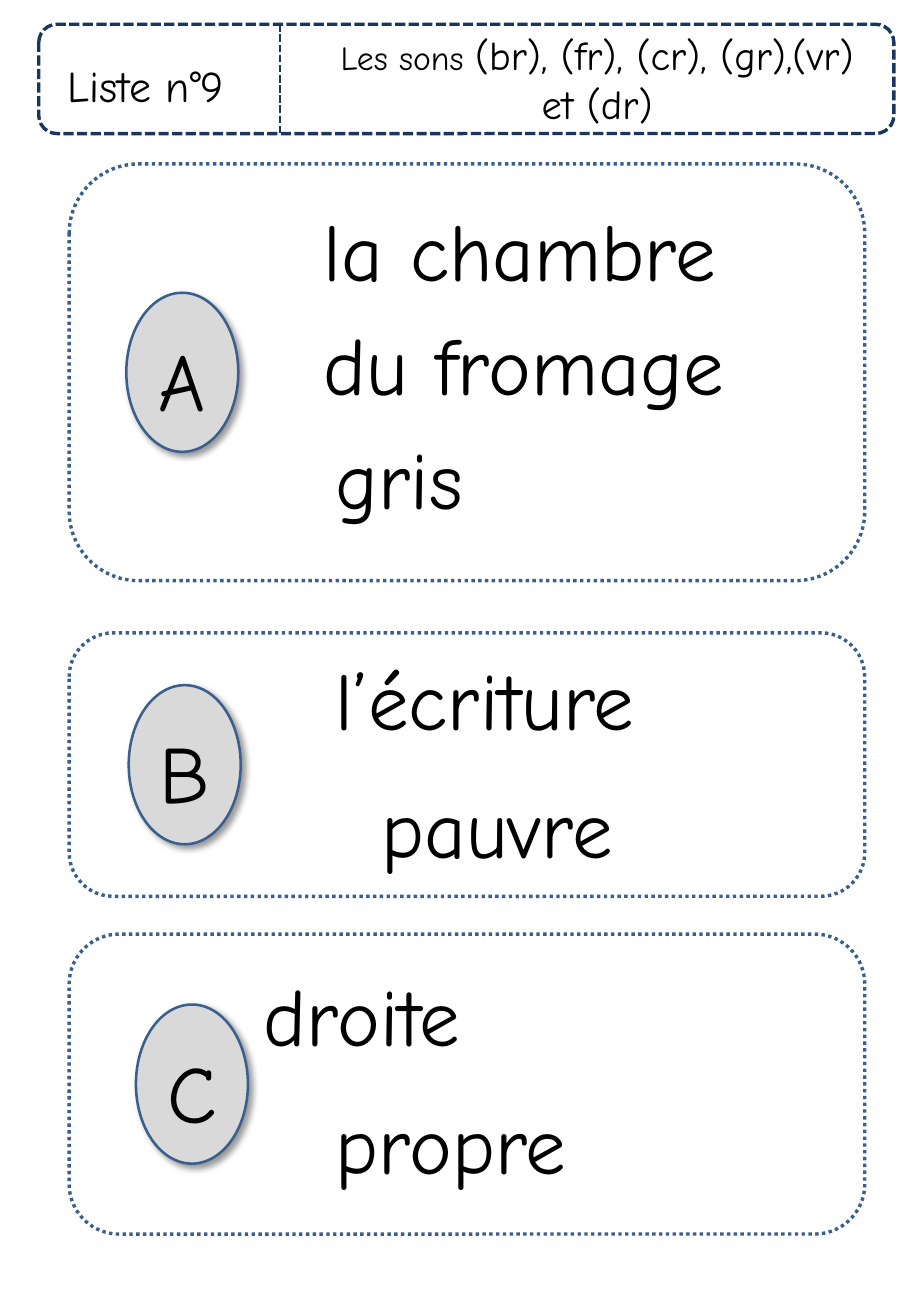
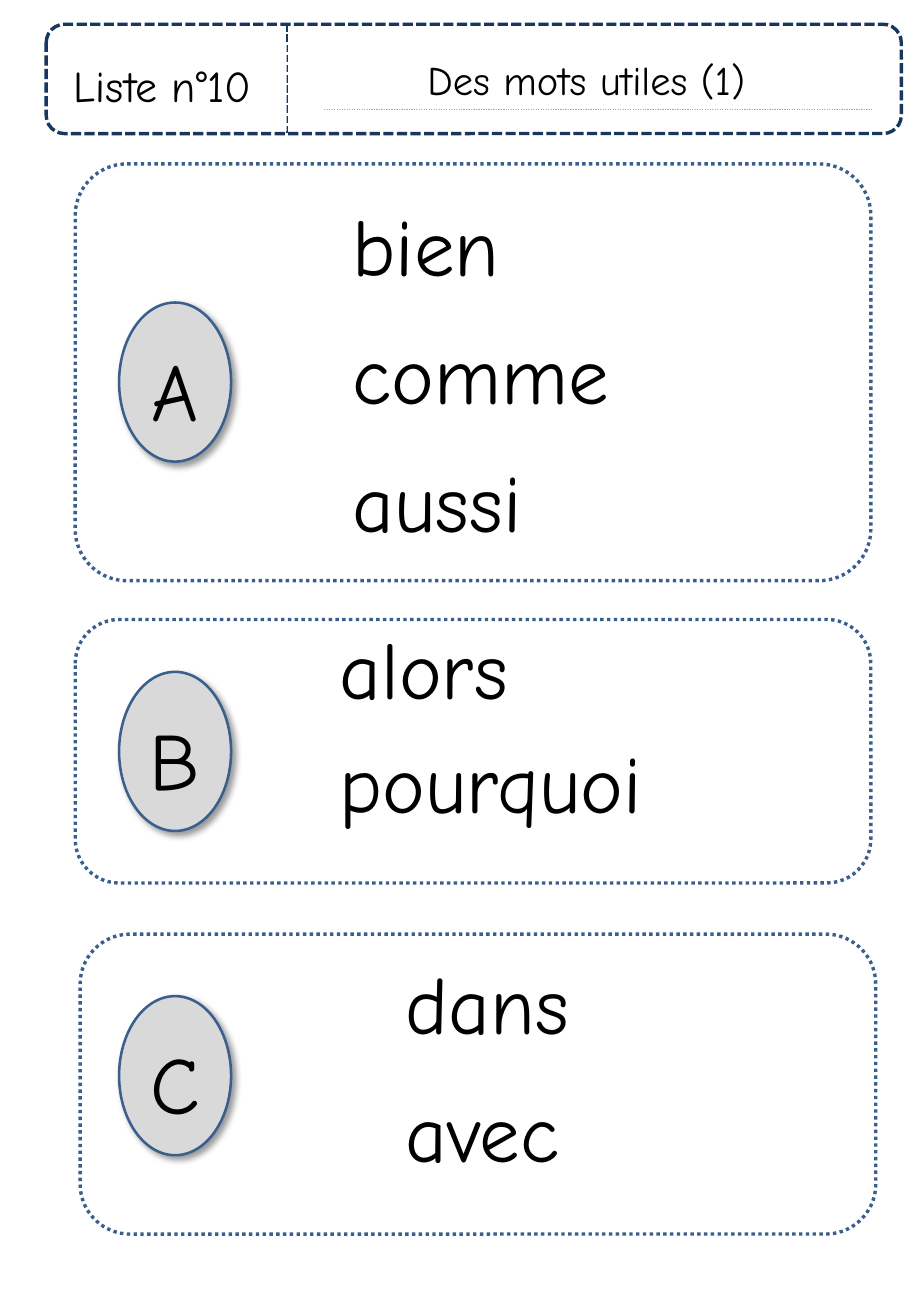
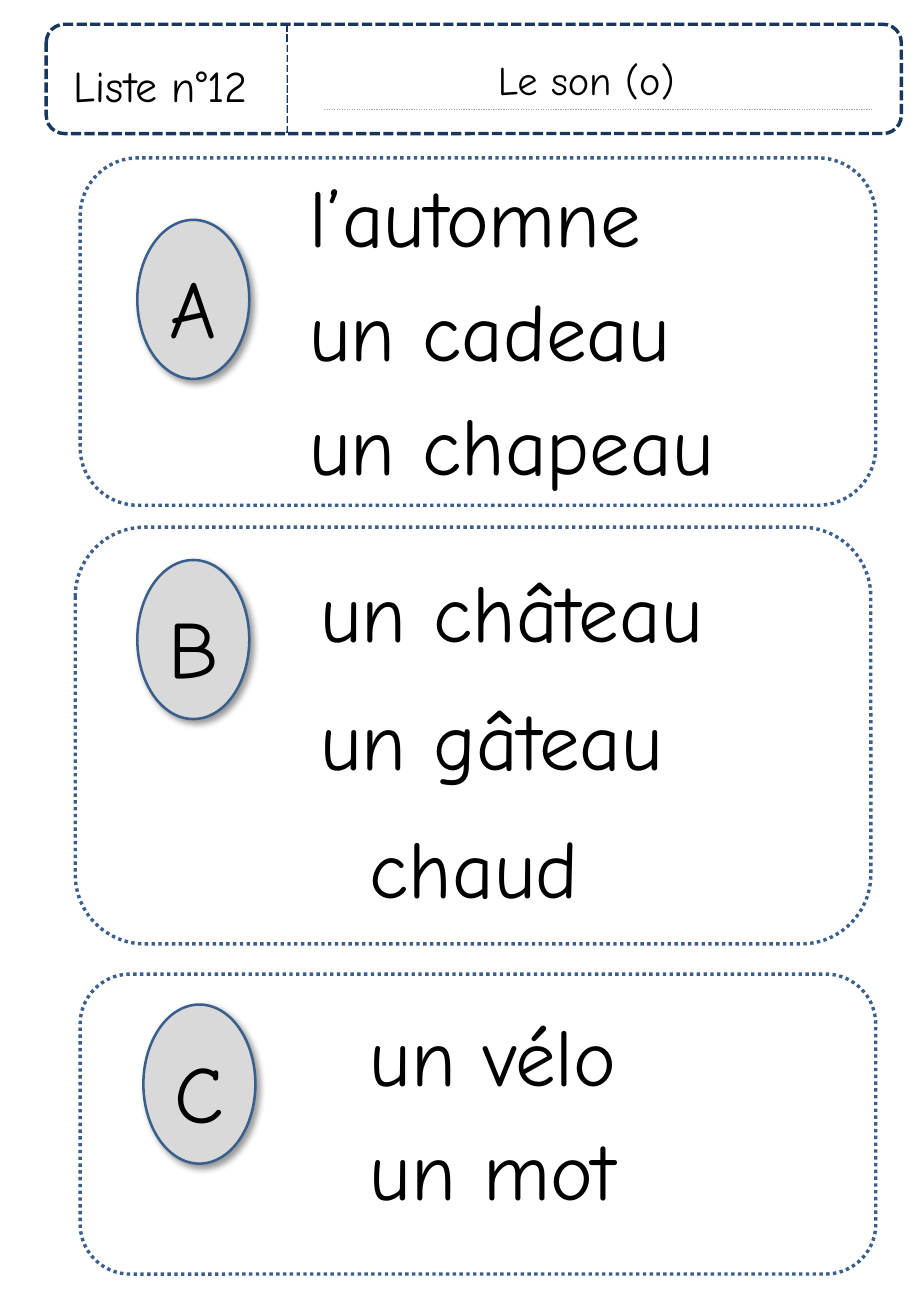
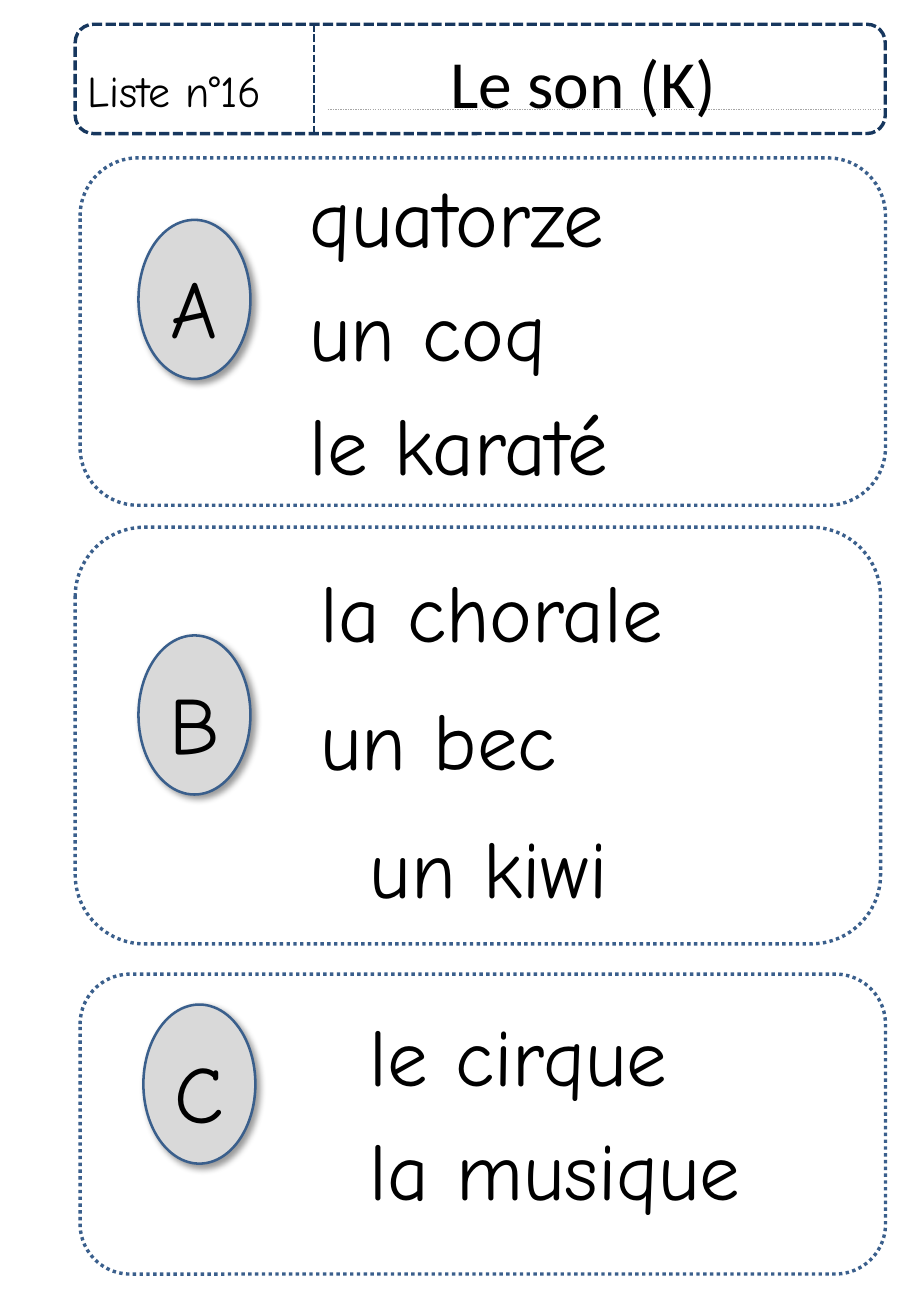
from lxml import etree
from pptx import Presentation
from pptx.dml.color import RGBColor as RGB
from pptx.enum.dml import MSO_LINE as DASH
from pptx.enum.shapes import MSO_CONNECTOR as LINK, MSO_SHAPE as SHAPE
from pptx.enum.text import PP_ALIGN as ALIGN
from pptx.oxml import parse_xml
from pptx.oxml.ns import nsdecls, qn
from pptx.util import Pt

HUES = {"navy": "17375E", "blue": "3A5F8C", "rule": "A6A6A6",
        "grey": "D9D9D9", "white": "FFFFFF", "ink": "000000"}
FONT = "Comic Neue"
TIGHT, LOOSE = 10, 18.4          # space between words of a panel
TOP, TALL = 14.4, 64.8           # header band
LOW, MID, HIGH, BIG = 156.2, 177.8, 205.9, 247   # panel heights


def hue(name):
    return RGB.from_string(HUES[name])


class Sheet:
    """Holds the style and the current slide."""

    def __init__(self):
        self.deck = Presentation()
        self.deck.slide_width, self.deck.slide_height = Pt(540), Pt(780)
        self.slide = None

    def page(self):
        self.slide = self.deck.slides.add_slide(self.deck.slide_layouts[6])

    def pen(self, line, color, width, dash=None):
        line.color.rgb = hue(color)
        line.width = Pt(width)
        if dash:
            line.dash_style = dash

    def run(self, para, text, size, font=FONT):
        run = para.add_run()
        run.text = text
        run.font.size, run.font.name = Pt(size), font
        run.font.color.rgb = hue("ink")

    def shape(self, kind, box, fill=None):
        item = self.slide.shapes.add_shape(kind, *map(Pt, box))
        item.shadow.inherit = False
        if fill:
            item.fill.solid()
            item.fill.fore_color.rgb = hue(fill)
        else:
            item.fill.background()
        return item

    def text(self, box):
        frame = self.slide.shapes.add_textbox(*map(Pt, box)).text_frame
        frame.word_wrap = True
        return frame

    def frame(self, box, color, dash, curve=None):
        item = self.shape(SHAPE.ROUNDED_RECTANGLE, box)
        self.pen(item.line, color, 2, dash)
        if curve:
            item.adjustments[0] = curve

    def line(self, x1, y1, x2, y2, color, width, dash):
        item = self.slide.shapes.add_connector(
            LINK.STRAIGHT, Pt(x1), Pt(y1), Pt(x2), Pt(y2))
        self.pen(item.line, color, width, dash)
        etree.SubElement(item._element.spPr, qn("a:effectLst"))

    def label(self, text, box):
        item = self.shape(SHAPE.RECTANGLE, box, "white")
        item.line.fill.background()
        frame = item.text_frame
        frame.word_wrap = True
        frame.vertical_anchor = 1
        para = frame.paragraphs[0]
        para.alignment, para.line_spacing = ALIGN.LEFT, 1.15
        self.run(para, text, 26)

    def title(self, runs, box):
        para = self.text(box).paragraphs[0]
        para.alignment = ALIGN.CENTER
        for part in runs:
            self.run(para, *part)

    def badge(self, letter, x, y):
        item = self.shape(SHAPE.OVAL, (x, y, 66.4, 94.3), "grey")
        self.pen(item.line, "blue", 1.5)
        glow = item._element.spPr.find(qn("a:effectLst"))
        glow.append(parse_xml(
            f'<a:outerShdw {nsdecls("a")} blurRad="{Pt(4)}" dist="{Pt(3)}" '
            f'dir="2700000" algn="tl" rotWithShape="0"><a:srgbClr val="{HUES["ink"]}">'
            '<a:alpha val="40000"/></a:srgbClr></a:outerShdw>'))
        frame = item.text_frame
        frame.margin_left = frame.margin_right = 0
        frame.margin_top = frame.margin_bottom = 0
        frame.vertical_anchor = 1
        para = frame.paragraphs[0]
        para.alignment, para.line_spacing = ALIGN.CENTER, 1.15
        self.run(para, letter, 48)

    def words(self, x, y, gap, items, shifts=()):
        """Stack words; shifts gives each one's own indent."""
        frame = self.text((x, y, 340, 58 * len(items) + gap * (len(items) - 1)))
        frame.margin_left = frame.margin_right = 0
        frame.margin_top = frame.margin_bottom = 0
        for i, word in enumerate(items):
            para = frame.add_paragraph() if i else frame.paragraphs[0]
            if i:
                para.space_before = Pt(gap)
            if shifts:
                para._p.get_or_add_pPr().set("marL", str(Pt(shifts[i])))
            self.run(para, word, 48)

    def head(self, name, runs, left, wide, split, tag, box, rule=None, under=False):
        """Header band: label, divider, rule and title."""
        if under:
            self.label(name, tag)
        self.frame((left, TOP, wide, TALL), "navy", DASH.SQUARE_DOT)
        self.line(split, TOP, split, TOP + TALL, "navy", 1.5, DASH.SQUARE_DOT)
        if not under:
            self.label(name, tag)
        if rule:
            self.line(rule[0], 64.8, rule[1], 64.8, "rule", 0.75, DASH.ROUND_DOT)
        self.title(runs, box)

    def panels(self, wide, rows):
        """Lettered panels: frame, badge and words."""
        for letter, (x, y, tall, spot, words, *curve) in zip("ABC", rows):
            self.frame((x, y, wide, tall), "blue", DASH.ROUND_DOT, *curve)
            self.badge(letter, *spot)
            self.words(*words)


def sound_rows(lists, x, b_top):
    """Panels shared by the lists about one sound."""
    a, b, c = lists
    return [
        (47.5, 93.6, HIGH, (x, 130.3), (183.5, 98.6, TIGHT, a)),
        (44.6, 312.5, BIG, (x, b_top), (190, 332.7, LOOSE, b, (0, 0, 29.3))),
        (47.5, 577.4, MID, (85, 595.4), (219.3, 595.8, TIGHT, c)),
    ]


def main():
    sheet = Sheet()
    wide, tag = 471.6, (36.7, 26.6, 133.2, 51.1)
    band = {"left": 27.4, "wide": 506.9, "split": 170, "tag": tag,
            "box": (155, 28.8, 385, 36), "rule": (192.2, 517)}

    # List 9
    sheet.page()
    sheet.head("Liste n°9",
               [("Les sons ", 20), ("(br), (fr), (cr), (gr),(vr) et (dr)", 24)],
               23, 506.9, 166, (33.1, 26.6, 125.3, 51.1), (190.1, TOP, 327.6, 65.5))
    sheet.panels(wide, [
        (41, 97.2, BIG, (74.9, 173.5),
         (192, 118.8, TIGHT, ["la chambre", "du fromage", "gris"], (0, 0, 7))),
        (41, 375.1, LOW, (76.3, 406.1),
         (199, 384.8, LOOSE, ["l’écriture", "pauvre"], (0, 27.3))),
        (41, 553.7, MID, (80.6, 595.4),
         (156.4, 572.1, LOOSE, ["droite", "propre"], (0, 42.6))),
    ])

    # List 10
    sheet.page()
    sheet.head("Liste n°10", [("Des mots utiles (1)", 24)], **band)
    sheet.panels(wide, [
        (44.6, 97.2, BIG, (70.6, 179.3),
         (209, 115.8, LOOSE, ["bien", "comme", "aussi"]), 0.124),
        (44.6, 367.2, LOW, (70.6, 398.2),
         (201.3, 366.4, TIGHT, ["alors", "pourquoi"])),
        (47.5, 553.7, MID, (70.6, 590.4),
         (240.6, 565, LOOSE, ["dans", "avec"])),
    ])

    # List 12
    sheet.page()
    sheet.head("Liste n°12", [("Le son (o)", 24)], **band)
    sheet.panels(wide, sound_rows([
        ["l’automne", "un cadeau", "un chapeau"],
        ["un château", "un gâteau", "chaud"],
        ["un vélo", "un mot"]], 81.4, 331.9))

    # List 16
    sheet.page()
    sheet.head("Liste n°16", [("Le son (K)", 40, "Calibri")],
               44.6, 480.2, 186.1, (44.6, 29.5, 157, 51.1),
               (194.4, 20.9, 302.4, 55.4), (194.4, 522), under=True)
    sheet.panels(477.4, sound_rows([
        ["quatorze", "un coq", "le karaté"],
        ["la chorale", "un bec", "un kiwi"],
        ["le cirque", "la musique"]], 82.1, 376.6))

    sheet.deck.save("out.pptx")


if __name__ == "__main__":
    main()
